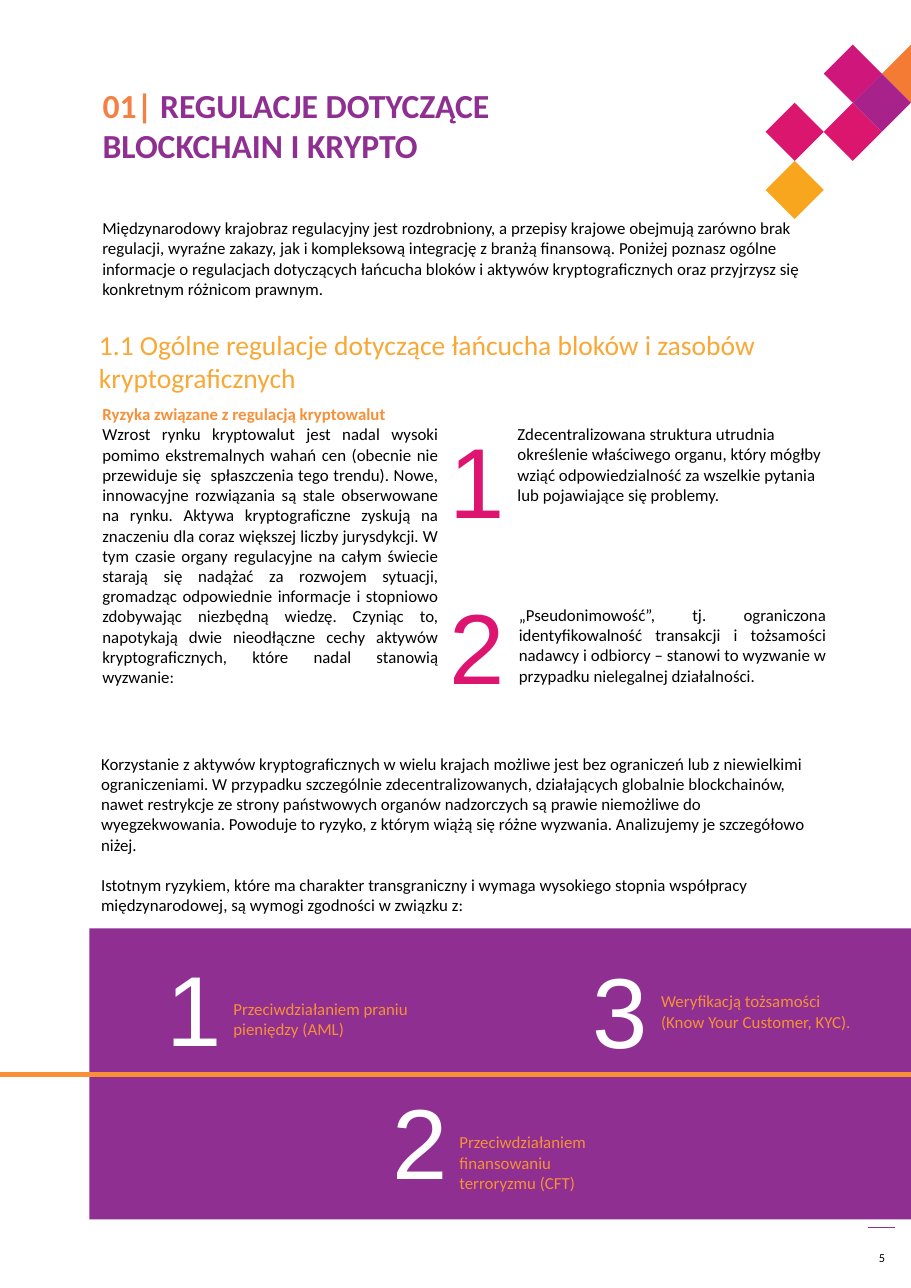
from lxml import etree
from pptx import Presentation
from pptx.dml.color import RGBColor
from pptx.enum.shapes import MSO_CONNECTOR, MSO_SHAPE
from pptx.enum.text import MSO_ANCHOR, MSO_AUTO_SIZE, PP_ALIGN
from pptx.oxml.ns import qn
from pptx.util import Cm, Pt

LEFT, CENTER, JUSTIFY = PP_ALIGN.LEFT, PP_ALIGN.CENTER, PP_ALIGN.JUSTIFY
TOP, MIDDLE = MSO_ANCHOR.TOP, MSO_ANCHOR.MIDDLE
DIAMOND, RECTANGLE = MSO_SHAPE.DIAMOND, MSO_SHAPE.RECTANGLE
STRAIGHT = MSO_CONNECTOR.STRAIGHT
NO_AUTOFIT = MSO_AUTO_SIZE.NONE

BLACK = RGBColor(0x00, 0x00, 0x00)
WHITE = RGBColor(0xFF, 0xFF, 0xFF)
PURPLE = RGBColor(0x8E, 0x2F, 0x91)
VIOLET = RGBColor(0xA7, 0x22, 0x8B)
MAGENTA = RGBColor(0xCF, 0x16, 0x7B)
PINK = RGBColor(0xDB, 0x16, 0x6E)
DIGIT_PINK = RGBColor(0xDD, 0x14, 0x70)
TILE_ORANGE = RGBColor(0xF4, 0x7B, 0x34)
CHAPTER_ORANGE = RGBColor(0xF4, 0x80, 0x43)
ORANGE = RGBColor(0xF7, 0x90, 0x37)
AMBER = RGBColor(0xF9, 0xA6, 0x1F)
HEADING_AMBER = RGBColor(0xF9, 0xA8, 0x35)

PAGE_WIDTH, PAGE_HEIGHT = 21, 29.7
TILE_HALF, TILE_TOP = 0.67, 1.7


def write(paragraph, text, size=11, color=BLACK, bold=False, font="Calibri", align=LEFT):
    paragraph.alignment = align
    run = paragraph.add_run()
    run.text = text
    run.font.size = Pt(size)
    run.font.name = font
    run.font.bold = bold
    run.font.color.rgb = color


def add_frame(left, top, width, height, anchor=TOP):
    frame = slide.shapes.add_textbox(Cm(left), Cm(top), Cm(width), Cm(height)).text_frame
    frame.word_wrap = True
    frame.vertical_anchor = anchor
    return frame


prs = Presentation()
prs.slide_width, prs.slide_height = Cm(PAGE_WIDTH), Cm(PAGE_HEIGHT)
slide = prs.slides.add_slide(prs.slide_layouts[5])

builder = slide.shapes.build_freeform(Cm(PAGE_WIDTH - TILE_HALF), Cm(TILE_TOP))
builder.add_line_segments([
    (Cm(PAGE_WIDTH), Cm(TILE_TOP - TILE_HALF)),
    (Cm(PAGE_WIDTH), Cm(TILE_TOP + TILE_HALF)),
])
edge_tile = builder.convert_to_shape()
edge_tile.shadow.inherit = False
edge_tile.fill.solid()
edge_tile.fill.fore_color.rgb = TILE_ORANGE
edge_tile.line.fill.background()

for column, row, color in [(4, 4, AMBER), (4, 2, PINK), (2, 2, PINK), (1, 1, VIOLET), (2, 0, MAGENTA)]:
    tile = slide.shapes.add_shape(
        DIAMOND,
        Cm(PAGE_WIDTH - (column + 1) * TILE_HALF),
        Cm(TILE_TOP + (row - 1) * TILE_HALF),
        Cm(2 * TILE_HALF),
        Cm(2 * TILE_HALF),
    )
    tile.shadow.inherit = False
    tile.fill.solid()
    tile.fill.fore_color.rgb = color
    tile.line.fill.background()

title = slide.shapes.title
title.left, title.top, title.width, title.height = Cm(2.11), Cm(1.83), Cm(11.02), Cm(3.35)
title.text_frame.vertical_anchor = TOP
title.text_frame.word_wrap = True
title.text_frame.auto_size = NO_AUTOFIT
chapter = title.text_frame.paragraphs[0]
write(chapter, "01| ", size=22, color=CHAPTER_ORANGE, bold=True)
write(chapter, "REGULACJE DOTYCZĄCE BLOCKCHAIN I KRYPTO", size=22, color=PURPLE, bold=True)

intro = add_frame(2.11, 4.9, 16.76, 1.55)
write(intro.paragraphs[0], "Międzynarodowy krajobraz regulacyjny jest rozdrobniony, a przepisy krajowe obejmują zarówno brak regulacji, wyraźne zakazy, jak i kompleksową integrację z branżą finansową. Poniżej poznasz ogólne informacje o regulacjach dotyczących łańcucha bloków i aktywów kryptograficznych oraz przyjrzysz się konkretnym różnicom prawnym.")

heading = add_frame(2.03, 7.44, 16.81, 1.32)
write(heading.paragraphs[0], "1.1 Ogólne regulacje dotyczące łańcucha bloków i zasobów kryptograficznych", size=18, color=HEADING_AMBER)

risks = add_frame(2.11, 9.19, 8.25, 7.87)
write(risks.paragraphs[0], "Ryzyka związane z regulacją kryptowalut", color=ORANGE, bold=True, align=JUSTIFY)
write(risks.add_paragraph(), "Wzrost rynku kryptowalut jest nadal wysoki pomimo ekstremalnych wahań cen (obecnie nie przewiduje się  spłaszczenia tego trendu). Nowe, innowacyjne rozwiązania są stale obserwowane na rynku. Aktywa kryptograficzne zyskują na znaczeniu dla coraz większej liczby jurysdykcji. W tym czasie organy regulacyjne na całym świecie starają się nadążać za rozwojem sytuacji, gromadząc odpowiednie informacje i stopniowo zdobywając niezbędną wiedzę. Czyniąc to, napotykają dwie nieodłączne cechy aktywów kryptograficznych, które nadal stanowią wyzwanie:", align=JUSTIFY)

structure = add_frame(11.68, 9.65, 7.62, 2.2)
write(structure.paragraphs[0], "Zdecentralizowana struktura utrudnia określenie właściwego organu, który mógłby wziąć odpowiedzialność za wszelkie pytania lub pojawiające się problemy.")

pseudonymity = add_frame(11.71, 13.82, 7.59, 2.2)
write(pseudonymity.paragraphs[0], "„Pseudonimowość”, tj. ograniczona identyfikowalność transakcji i tożsamości nadawcy i odbiorcy – stanowi to wyzwanie w przypadku nielegalnej działalności.", align=JUSTIFY)

challenges = add_frame(2.08, 17.25, 16.76, 4)
write(challenges.paragraphs[0], "Korzystanie z aktywów kryptograficznych w wielu krajach możliwe jest bez ograniczeń lub z niewielkimi ograniczeniami. W przypadku szczególnie zdecentralizowanych, działających globalnie blockchainów, nawet restrykcje ze strony państwowych organów nadzorczych są prawie niemożliwe do wyegzekwowania. Powoduje to ryzyko, z którym wiążą się różne wyzwania. Analizujemy je szczegółowo niżej.")
compliance = challenges.add_paragraph()
compliance.space_before = Pt(13.2)
write(compliance, "Istotnym ryzykiem, które ma charakter transgraniczny i wymaga wysokiego stopnia współpracy międzynarodowej, są wymogi zgodności w związku z:")

panel = slide.shapes.add_shape(RECTANGLE, Cm(2.06), Cm(21.41), Cm(18.94), Cm(6.71))
panel.shadow.inherit = False
panel.fill.solid()
panel.fill.fore_color.rgb = PURPLE
panel.line.fill.background()

for start, end, y, color, weight in [(0, PAGE_WIDTH, 24.77, ORANGE, 3), (20.02, 20.62, 28.3, PURPLE, 0.75)]:
    rule = slide.shapes.add_connector(STRAIGHT, Cm(start), Cm(y), Cm(end), Cm(y))
    rule.line.color.rgb = color
    rule.line.width = Pt(weight)
    etree.SubElement(rule._element.spPr, qn("a:effectLst"))

for digit, left, top, color in [
    ("1", 10.11, 9.53, DIGIT_PINK),
    ("2", 10.11, 13.36, DIGIT_PINK),
    ("1", 3.58, 21.72, WHITE),
    ("2", 8.79, 24.79, WHITE),
    ("3", 13.41, 21.77, WHITE),
]:
    write(add_frame(left, top, 1.83, 3.02).paragraphs[0], digit, size=65, color=color, font="Arial")

for requirement, left, top, width in [
    ("Przeciwdziałaniem praniu pieniędzy (AML)", 5.13, 22.91, 5.46),
    ("Przeciwdziałaniem finansowaniu terroryzmu (CFT)", 10.34, 25.98, 4.45),
    ("Weryfikacją tożsamości (Know Your Customer, KYC).", 14.99, 22.73, 5.23),
]:
    write(add_frame(left, top, width, 1.2).paragraphs[0], requirement, color=ORANGE)

page_number = add_frame(19.81, 28.35, 1.04, 1.3, anchor=MIDDLE)
write(page_number.paragraphs[0], "5", size=8, align=CENTER)

prs.save("out.pptx")
